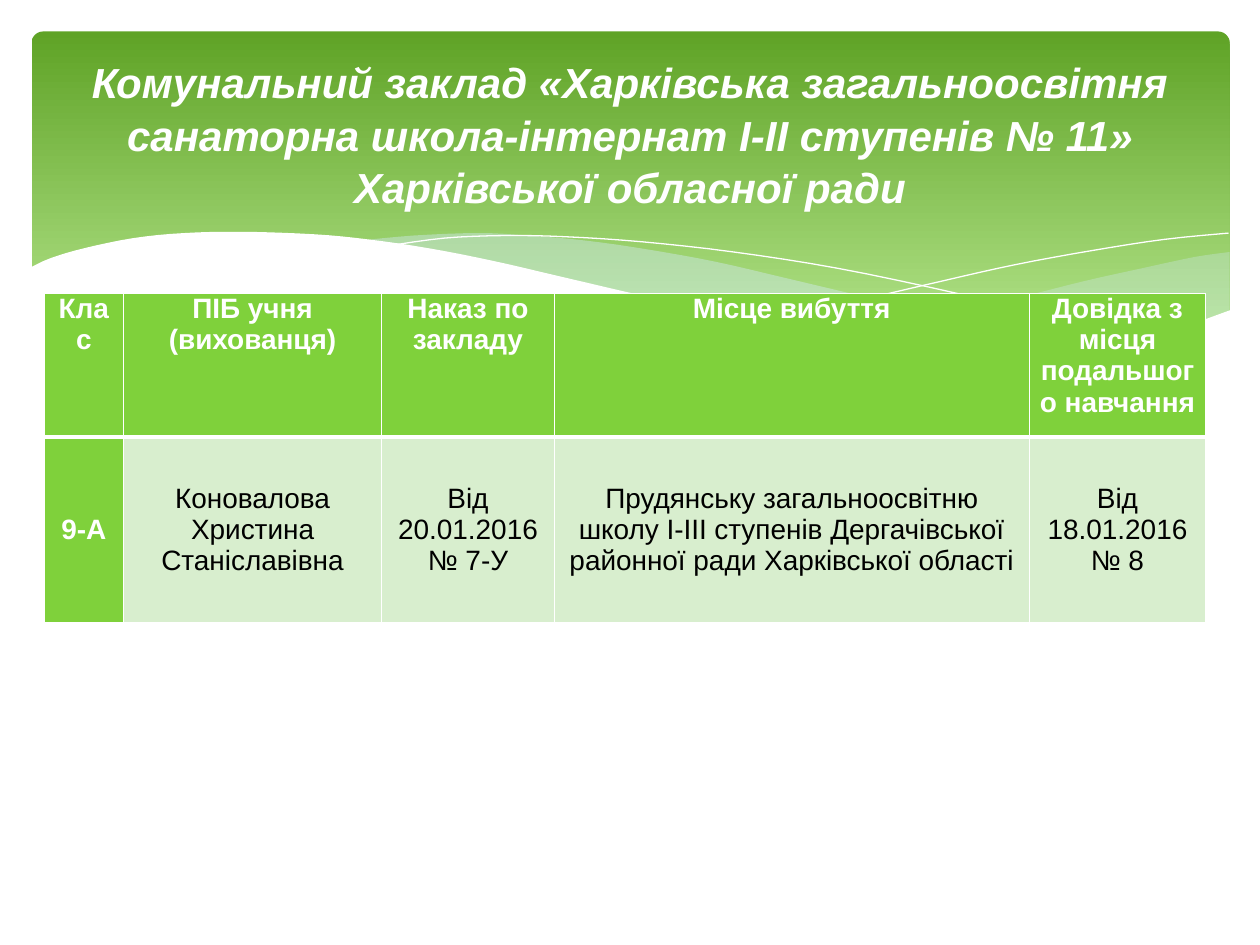
import lxml.etree
import pptx
import pptx.dml.color
import pptx.enum.shapes
import pptx.enum.text
import pptx.oxml.ns
import pptx.util
from pptx.util import Inches

WHITE, BLACK = "FFFFFF", "000000"
GREEN, PALE_GREEN = "7FD13B", "D8EECE"
BANNER_TOP, BANNER_BOTTOM, MIST = "5FA326", "B2E389", "D6ECFF"

RIGHT_WAVE_TOP = [(9.76, 2), (9.48, 2.04), (9.06, 2.13), (8.61, 2.23), (8.05, 2.37),
                  (7.53, 2.48), (7.06, 2.57), (6.61, 2.65)]
RIGHT_WAVE_BOTTOM = [(6.61, 2.65), (7.05, 2.71), (7.57, 2.76), (8.03, 2.78), (8.54, 2.76),
                     (8.97, 2.7), (9.35, 2.62), (9.76, 2.47)]
MIDDLE_WAVE_TOP = [(8.93, 2.73), (8.37, 2.65), (7.75, 2.54), (7.06, 2.4), (6.29, 2.22),
                   (5.69, 2.08), (5.14, 1.98), (4.65, 1.91), (4.2, 1.87), (3.8, 1.85),
                   (3.28, 1.87), (2.86, 1.91)]
MIDDLE_WAVE_BOTTOM = [(2.86, 1.91), (3.42, 1.99), (4.04, 2.11), (4.49, 2.22), (5.3, 2.4),
                      (6.01, 2.55), (6.65, 2.66), (7.22, 2.74), (7.73, 2.77), (8.28, 2.78),
                      (8.93, 2.73)]
FALLING_LINE = [(3.09, 1.95), (3.53, 1.89), (4.01, 1.87), (4.5, 1.88), (5.1, 1.92),
                (5.82, 2), (6.65, 2.13), (7.6, 2.33), (8.31, 2.51), (9.07, 2.72)]
RISING_LINE = [(6.13, 2.57), (6.72, 2.41), (7.48, 2.23), (8.06, 2.1), (8.66, 1.99),
               (9.24, 1.9), (9.75, 1.85)]
FRONT_WAVE = [(9.77, 2.46), (9.3, 2.62), (8.75, 2.73), (8.09, 2.77), (7.44, 2.74),
              (6.68, 2.65), (6.03, 2.54), (5.29, 2.39), (4.47, 2.2), (3.91, 2.07),
              (3.4, 1.97), (2.92, 1.9), (2.5, 1.86), (1.93, 1.84), (1.46, 1.85),
              (1.06, 1.89), (0.67, 1.97), (0.4, 2.05), (0.23, 2.13)]
FRONT_BASE = [(0.23, 3.29), (9.77, 3.29)]

TITLE = ("Комунальний заклад «Харківська загальноосвітня санаторна "
         "школа-інтернат І-ІІ ступенів № 11» Харківської обласної ради")
COLUMN_WIDTHS = [0.63, 2.05, 1.37, 3.77, 1.4]
ROW_HEIGHTS = [1.14, 1.47]
ROWS = [
    ["Клас", "ПІБ учня (вихованця)", "Наказ по закладу", "Місце вибуття",
     "Довідка з місця подальшого навчання"],
    ["9-А", "Коновалова Христина Станіславівна", "Від 20.01.2016 № 7-У",
     "Прудянську загальноосвітню школу І-ІІІ ступенів Дергачівської районної ради "
     "Харківської області", "Від 18.01.2016 № 8"],
]


def color(value):
    return pptx.dml.color.RGBColor.from_string(value)


def smooth(points, steps=4):
    padded = [points[0], *points, points[-1]]
    curve = [points[0]]
    for a, b, c, d in zip(padded, padded[1:], padded[2:], padded[3:]):
        for step in range(1, steps + 1):
            t = step / steps
            curve.append(tuple(
                (2 * q + (r - p) * t + (2 * p - 5 * q + 4 * r - s) * t ** 2
                 + (3 * q - p - 3 * r + s) * t ** 3) / 2
                for p, q, r, s in zip(a, b, c, d)))
    return curve


class SlideBuilder:
    """Holds the text style and the current slide, and adds its elements."""

    def __init__(self, slide, font="Arial"):
        self.slide = slide
        self.font = font

    def format_text(self, frame, size, text_color, bold=False, italic=False, spacing=1.0):
        for paragraph in frame.paragraphs:
            paragraph.alignment = pptx.enum.text.PP_ALIGN.CENTER
            paragraph.line_spacing = spacing
            for run in paragraph.runs:
                run.font.name = self.font
                run.font.size = pptx.util.Pt(size)
                run.font.bold = bold
                run.font.italic = italic
                run.font.color.rgb = color(text_color)

    def banner(self, left, top, width, height):
        shape = self.slide.shapes.add_shape(
            pptx.enum.shapes.MSO_SHAPE.ROUNDED_RECTANGLE,
            Inches(left), Inches(top), Inches(width), Inches(height))
        shape.adjustments[0] = 0.034
        shape.shadow.inherit = False
        shape.line.fill.background()
        shape.fill.gradient()
        shape.fill.gradient_angle = 270
        stops = [(0, BANNER_TOP), (0.9, BANNER_BOTTOM)]
        for stop, (position, value) in zip(shape.fill.gradient_stops, stops):
            stop.position = position
            stop.color.rgb = color(value)

    def outline(self, points, close):
        vertices = [(Inches(x), Inches(y)) for x, y in points]
        builder = self.slide.shapes.build_freeform(*vertices[0], scale=1.0)
        builder.add_line_segments(vertices[1:], close=close)
        shape = builder.convert_to_shape()
        shape.shadow.inherit = False
        return shape

    def wave(self, points, fill_color, opacity=100):
        shape = self.outline(points, close=True)
        shape.line.fill.background()
        shape.fill.solid()
        shape.fill.fore_color.rgb = color(fill_color)
        if opacity < 100:
            tint = shape.element.spPr.find(".//" + pptx.oxml.ns.qn("a:srgbClr"))
            lxml.etree.SubElement(tint, pptx.oxml.ns.qn("a:alpha"), val=str(opacity * 1000))

    def curve(self, points):
        shape = self.outline(smooth(points), close=False)
        shape.fill.background()
        shape.line.color.rgb = color(WHITE)
        shape.line.width = pptx.util.Pt(0)

    def title(self, text, left, top, width, height):
        shape = self.slide.shapes.title
        shape.left, shape.top = Inches(left), Inches(top)
        shape.width, shape.height = Inches(width), Inches(height)
        frame = shape.text_frame
        frame.text = text
        frame.word_wrap = True
        frame.vertical_anchor = pptx.enum.text.MSO_ANCHOR.MIDDLE
        self.format_text(frame, 24, WHITE, bold=True, italic=True, spacing=1.05)
        shape.element.getparent().append(shape.element)

    def borders(self, cell, **widths):
        properties = cell._tc.get_or_add_tcPr()
        for side in "LRTB":
            width = pptx.util.Pt(widths.get(side, 1))
            line = lxml.etree.SubElement(
                properties, pptx.oxml.ns.qn("a:ln" + side), w=str(width))
            fill = lxml.etree.SubElement(line, pptx.oxml.ns.qn("a:solidFill"))
            lxml.etree.SubElement(fill, pptx.oxml.ns.qn("a:srgbClr"), val=WHITE)

    def table(self, rows, left, top, column_widths, row_heights):
        table = self.slide.shapes.add_table(
            len(rows), len(column_widths), Inches(left), Inches(top),
            Inches(sum(column_widths)), Inches(sum(row_heights))).table
        for column, width in zip(table.columns, column_widths):
            column.width = Inches(width)
        for row, height in zip(table.rows, row_heights):
            row.height = Inches(height)
        for row_index, texts in enumerate(rows):
            for column_index, text in enumerate(texts):
                cell = table.cell(row_index, column_index)
                heading = row_index == 0 or column_index == 0
                cell.text = text
                cell.margin_left = cell.margin_right = Inches(0.06)
                cell.margin_top = cell.margin_bottom = 0
                if row_index == 0:
                    self.borders(cell, B=3)
                else:
                    self.borders(cell, T=3)
                    cell.vertical_anchor = pptx.enum.text.MSO_ANCHOR.MIDDLE
                cell.fill.solid()
                cell.fill.fore_color.rgb = color(GREEN if heading else PALE_GREEN)
                self.format_text(cell.text_frame, 16, WHITE if heading else BLACK, bold=heading)


def main():
    presentation = pptx.Presentation()
    presentation.slide_width, presentation.slide_height = Inches(10), Inches(7.5)
    builder = SlideBuilder(presentation.slides.add_slide(presentation.slide_layouts[5]))
    builder.banner(0.25, 0.25, 9.51, 2.7)
    builder.wave(smooth(RIGHT_WAVE_TOP) + smooth(RIGHT_WAVE_BOTTOM), MIST, opacity=29)
    builder.wave(smooth(MIDDLE_WAVE_TOP) + smooth(MIDDLE_WAVE_BOTTOM), MIST, opacity=40)
    builder.curve(FALLING_LINE)
    builder.curve(RISING_LINE)
    builder.wave(smooth(FRONT_WAVE) + FRONT_BASE, WHITE)
    builder.title(TITLE, 0.5, 0.37, 9, 1.37)
    builder.table(ROWS, 0.35, 2.33, COLUMN_WIDTHS, ROW_HEIGHTS)
    presentation.save("out.pptx")


if __name__ == "__main__":
    main()
